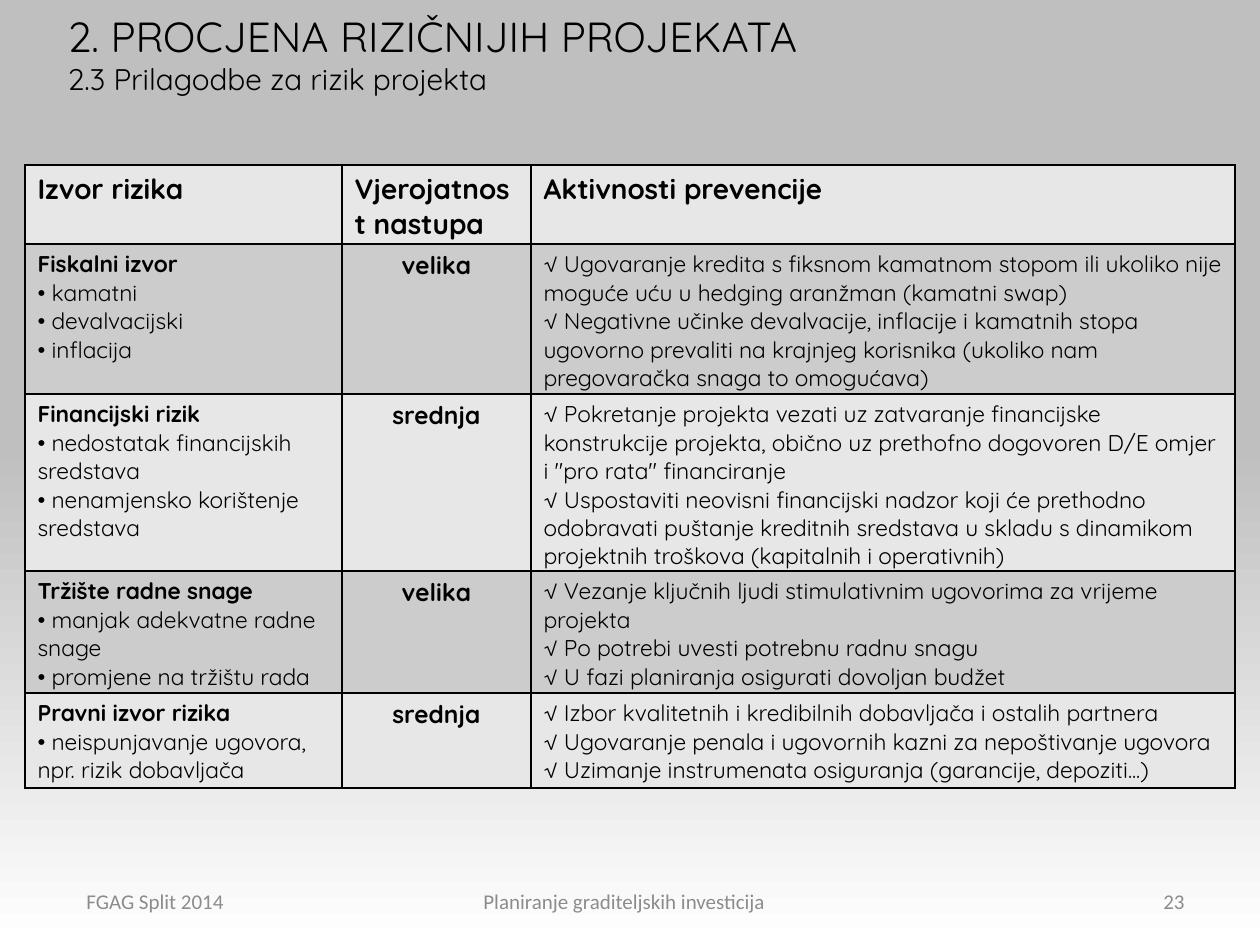
from lxml import etree
from pptx import Presentation
from pptx import util as u
from pptx.dml.color import RGBColor
from pptx.enum import text
from pptx.oxml.ns import qn

PX = u.Inches(1) / 126
BLACK, GREY = "000000", "8C8C8C"
LIGHT, DARK = "E7E7E7", "CCCCCC"
BODY_FONT, FOOTER_FONT = "Quicksand", "Calibri"
LEFT, CENTER, RIGHT = (text.PP_ALIGN.LEFT, text.PP_ALIGN.CENTER,
                       text.PP_ALIGN.RIGHT)

HEADINGS = ["Izvor rizika", "Vjerojatnost nastupa", "Aktivnosti prevencije"]
RISKS = [
    (["Fiskalni izvor", "• kamatni", "• devalvacijski", "• inflacija"],
     "velika",
     ["√ Ugovaranje kredita s fiksnom kamatnom stopom ili ukoliko nije "
      "moguće uću u hedging aranžman (kamatni swap)",
      "√ Negativne učinke devalvacije, inflacije i kamatnih stopa ugovorno "
      "prevaliti na krajnjeg korisnika (ukoliko nam pregovaračka snaga to "
      "omogućava)"]),
    (["Financijski rizik", "• nedostatak financijskih sredstava",
      "• nenamjensko korištenje sredstava"],
     "srednja",
     ["√ Pokretanje projekta vezati uz zatvaranje financijske konstrukcije "
      "projekta, obično uz prethofno dogovoren D/E omjer i \"pro rata\" "
      "financiranje",
      "√ Uspostaviti neovisni financijski nadzor koji će prethodno odobravati "
      "puštanje kreditnih sredstava u skladu s dinamikom projektnih troškova "
      "(kapitalnih i operativnih)"]),
    (["Tržište radne snage", "• manjak adekvatne radne snage",
      "• promjene na tržištu rada"],
     "velika",
     ["√ Vezanje ključnih ljudi stimulativnim ugovorima za vrijeme projekta",
      "√ Po potrebi uvesti potrebnu radnu snagu",
      "√ U fazi planiranja osigurati dovoljan budžet"]),
    (["Pravni izvor rizika",
      "• neispunjavanje ugovora, npr. rizik dobavljača"],
     "srednja",
     ["√ Izbor kvalitetnih i kredibilnih dobavljača i ostalih partnera",
      "√ Ugovaranje penala i ugovornih kazni za nepoštivanje ugovora",
      "√ Uzimanje instrumenata osiguranja (garancije, depoziti...)"]),
]


def px(length):
    return u.Emu(round(length * PX))


def color(value):
    return RGBColor.from_string(value)


def add_borders(cell, value=BLACK, width=1):
    """Put the four lines ahead of the fill, as the schema asks."""
    properties = cell._tc.get_or_add_tcPr()
    for index, side in enumerate(("a:lnL", "a:lnR", "a:lnT", "a:lnB")):
        line = etree.Element(qn(side), w=str(u.Pt(width)))
        fill = etree.SubElement(line, qn("a:solidFill"))
        etree.SubElement(fill, qn("a:srgbClr"), val=value)
        properties.insert(index, line)


class SlideBuilder:
    """Holds the current slide and the shared text style."""

    def __init__(self, slide, font=BODY_FONT, ink=BLACK):
        self.slide, self.font, self.ink = slide, font, ink

    def background(self, bottom, top, top_position):
        fill = self.slide.background.fill
        fill.gradient()
        fill.gradient_angle = 90
        stops = fill.gradient_stops
        for stop, value, position in zip(stops, (bottom, top),
                                         (0, top_position)):
            stop.color.rgb = color(value)
            stop.position = position

    def set_lines(self, frame, lines, sizes, bolds, align=LEFT, font=None,
                  ink=None):
        """Fill a frame; the last size and weight serve all later lines."""
        frame.text = "\n".join(lines)
        for index, para in enumerate(frame.paragraphs):
            para.alignment = align
            for span in para.runs:
                span.font.size = u.Pt(sizes[min(index, len(sizes) - 1)])
                span.font.bold = bolds[min(index, len(bolds) - 1)]
                span.font.name = font or self.font
                span.font.color.rgb = color(ink or self.ink)

    def title(self, left, top, width, height, lines, sizes):
        box = self.slide.shapes.title
        box.left, box.top, box.width, box.height = map(
            px, (left, top, width, height))
        frame = box.text_frame
        frame.word_wrap = False
        frame.auto_size = text.MSO_AUTO_SIZE.NONE
        frame.vertical_anchor = text.MSO_ANCHOR.TOP
        self.set_lines(frame, lines, sizes, [False])

    def footer(self, left, width, label, align=LEFT):
        box = self.slide.shapes.add_textbox(*map(px, (left, 876, width, 50)))
        frame = box.text_frame
        frame.word_wrap = True
        frame.vertical_anchor = text.MSO_ANCHOR.MIDDLE
        self.set_lines(frame, [label], [12], [False], align, FOOTER_FONT, GREY)

    def cell(self, cell, fill, lines, size, bolds, align=LEFT):
        cell.margin_bottom = 0
        cell.fill.solid()
        cell.fill.fore_color.rgb = color(fill)
        add_borders(cell)
        self.set_lines(cell.text_frame, lines, [size], bolds, align)

    def risk_table(self, left, top, widths, heights):
        table = self.slide.shapes.add_table(
            len(heights), len(widths), px(left), px(top),
            px(sum(widths)), px(sum(heights))).table
        table.horz_banding = False
        for column, width in zip(table.columns, widths):
            column.width = px(width)
        for row, height in zip(table.rows, heights):
            row.height = px(height)
        for column, heading in enumerate(HEADINGS):
            self.cell(table.cell(0, column), LIGHT, [heading], 16, [True])
        for row, (source, likelihood, actions) in enumerate(RISKS, 1):
            fill = DARK if row % 2 else LIGHT
            self.cell(table.cell(row, 0), fill, source, 13, [True, False])
            self.cell(table.cell(row, 1), fill, [likelihood], 14, [True], CENTER)
            self.cell(table.cell(row, 2), fill, actions, 13, [False])


def main():
    deck = Presentation()
    deck.slide_width, deck.slide_height = u.Inches(10), u.Inches(7.5)
    page = SlideBuilder(deck.slides.add_slide(deck.slide_layouts[5]))
    page.background("FFFFFF", "BFBFBF", 0.53)
    page.title(55, 4, 761, 100,
               ["2. PROCJENA RIZIČNIJIH PROJEKATA",
                "2.3 Prilagodbe za rizik projekta"], [24, 17])
    page.risk_table(25, 165, [317, 189, 704], [79, 150, 177, 122, 95])
    page.footer(74, 250, "FGAG Split 2014")
    page.footer(471, 360, "Planiranje graditeljskih investicija")
    page.footer(903, 294, "23", RIGHT)
    deck.save("out.pptx")


if __name__ == "__main__":
    main()
